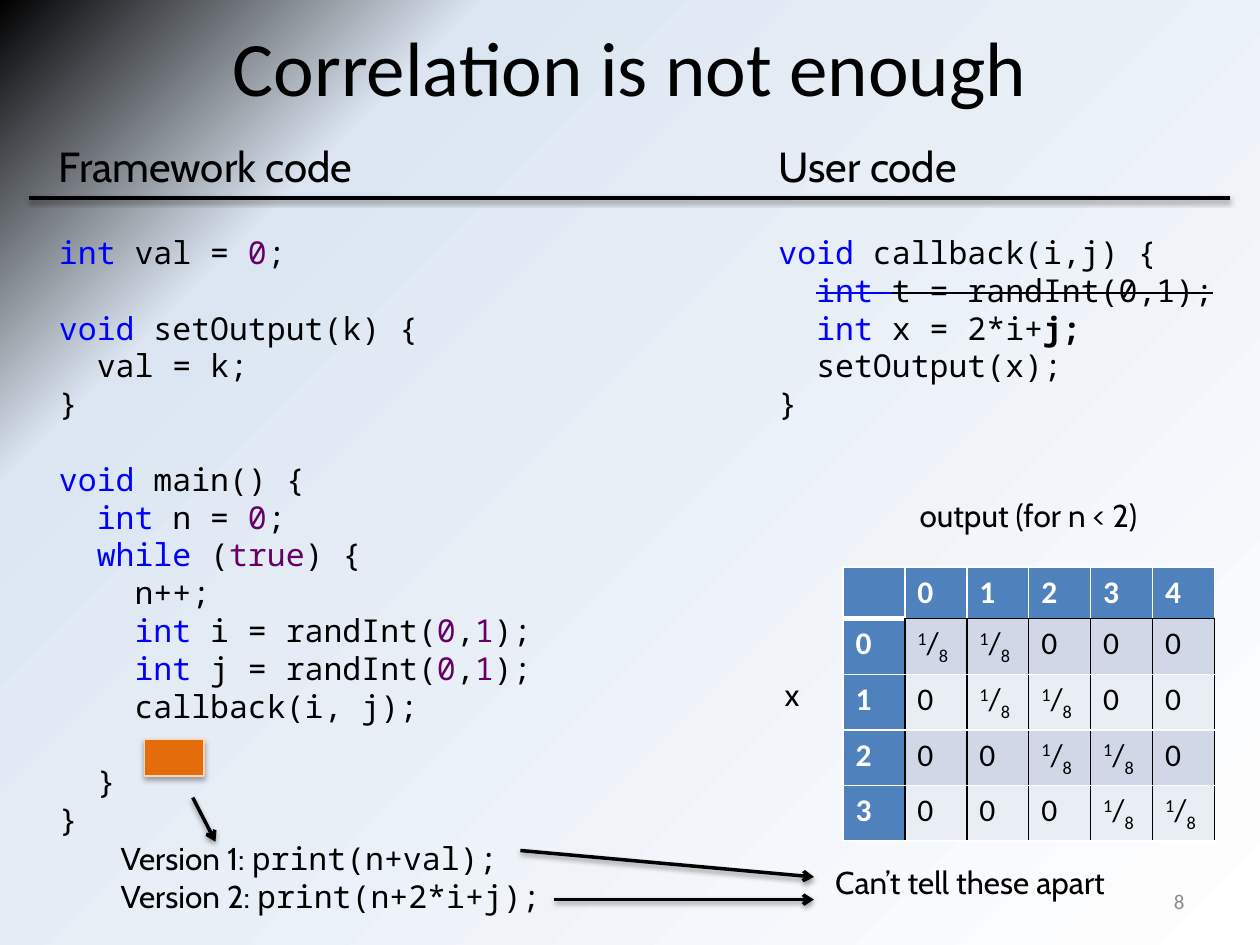
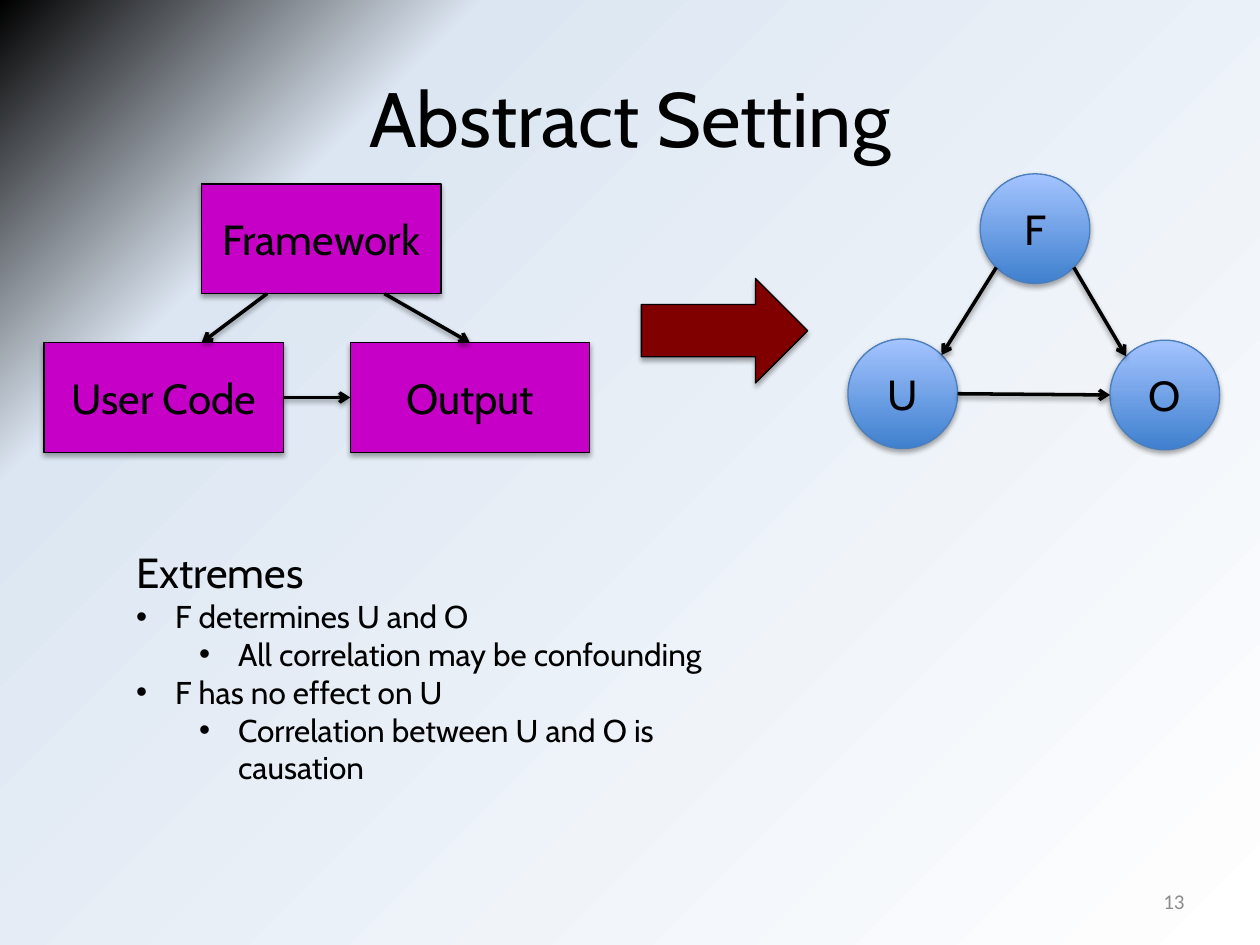
from lxml import etree
from pptx import Presentation
from pptx.dml.color import RGBColor
from pptx.enum.shapes import MSO_CONNECTOR, MSO_SHAPE
from pptx.enum.text import MSO_ANCHOR, MSO_AUTO_SIZE, PP_ALIGN
from pptx.oxml import parse_xml
from pptx.oxml.ns import qn
from pptx.util import Inches, Pt

RECT, OVAL, ARROW = MSO_SHAPE.RECTANGLE, MSO_SHAPE.OVAL, MSO_SHAPE.RIGHT_ARROW
STRAIGHT = MSO_CONNECTOR.STRAIGHT
LEFT, CENTER, RIGHT = PP_ALIGN.LEFT, PP_ALIGN.CENTER, PP_ALIGN.RIGHT
TOP, MIDDLE = MSO_ANCHOR.TOP, MSO_ANCHOR.MIDDLE
FIT_SHAPE, NO_FIT = MSO_AUTO_SIZE.SHAPE_TO_FIT_TEXT, MSO_AUTO_SIZE.NONE
TITLE_AND_CONTENT, TITLE_ONLY = 1, 5

C = {
    "black": "000000", "white": "FFFFFF", "sky": "DCE6F2", "number": "8C8C8C",
    "keyword": "0000FF", "literal": "660066", "hole": "E46C0A", "hole_line": "FCD5B5",
    "head": "4F81BD", "odd": "D0D8E8", "even": "E9EDF4", "box": "C700C7",
    "node_low": "3F80CE", "node_high": "A4C4FF", "node_line": "4B7EBC", "implies": "800000",
}
SANS, BODY, MONO = "Cabin", "Calibri", "Noto Sans Mono"
KEYWORDS = ("int", "void", "while")
CODE_LINE = Pt(21.6)
CODE_INDENT = 0.15
A_NS = "http://schemas.openxmlformats.org/drawingml/2006/main"

FRAMEWORK_CODE = """\
`int `val = `0`;

`void `setOutput(k) {
  val = k;
}

`void `main() {
  `int `n = `0`;
  `while` (`true`) {
    n++;
    `int `i = randInt(`0`,`1`);
    `int `j = randInt(`0`,`1`);
    callback(i, j);

  }
}"""
USER_CODE = """\
`void `callback(i,j) {
  `int `t = randInt(0,1);
  `int `x = 2*i+j;
  setOutput(x);
}"""


def rgb(name):
    return RGBColor.from_string(C[name])


# Text
def add_run(p, text, size=18, font=SANS, color="black", bold=False, strike=False, base=0):
    r = p.add_run()
    r.text = text
    f = r.font
    f.size, f.name, f.bold = Pt(size), font, bold
    f.color.rgb = rgb(color)
    rPr = r._r.get_or_add_rPr()
    if strike:
        rPr.set("strike", "sngStrike")
    if base:
        rPr.set("baseline", str(base * 1000))


def write(tf, paragraphs, align=LEFT, **fmt):
    """Each paragraph is a string or a list of (text, format) runs."""
    for i, runs in enumerate(paragraphs):
        p = tf.paragraphs[0] if i == 0 else tf.add_paragraph()
        p.alignment = align
        for text, own in [(runs, {})] if isinstance(runs, str) else runs:
            add_run(p, text, **{**fmt, **own})


def label(s, box, paragraphs, **fmt):
    tf = s.shapes.add_textbox(*map(Inches, box)).text_frame
    tf.word_wrap = False
    tf.auto_size = FIT_SHAPE
    write(tf, paragraphs, **fmt)
    return tf


def set_indent(p, left, hanging=0, bullet=None):
    pPr = p._p.get_or_add_pPr()
    pPr.set("marL", str(Inches(left)))
    pPr.set("indent", str(Inches(-hanging)))
    if bullet:
        etree.SubElement(pPr, qn("a:buChar")).set("char", bullet)
    else:
        etree.SubElement(pPr, qn("a:buNone"))


def code_runs(line):
    """Backticks enclose the coloured words of a line of code."""
    runs = []
    for i, part in enumerate(line.split("`")):
        if part:
            color = "black"
            if i % 2:
                color = "keyword" if part.strip() in KEYWORDS else "literal"
            runs.append((part, {"color": color}))
    return runs


def code_block(s, box, source, strike_line=None, bold_end=None):
    lines = source.split("\n")
    shown = [i for i, line in enumerate(lines) if line]
    paragraphs = [code_runs(lines[i].lstrip()) for i in shown]
    if strike_line is not None:
        paragraphs[strike_line] = [(t, {**f, "strike": True}) for t, f in paragraphs[strike_line]]
    if bold_end:
        row, end = bold_end
        text, f = paragraphs[row].pop()
        paragraphs[row] += [(text.removesuffix(end), f), (end, {"bold": True})]
    tf = label(s, box, paragraphs, font=MONO)
    for p, i in zip(tf.paragraphs, shown):
        set_indent(p, CODE_INDENT * (len(lines[i]) - len(lines[i].lstrip())))
        if i and not lines[i - 1]:
            p.space_before = CODE_LINE


# Shapes and lines
def add_shadow(spPr, distance, alpha):
    effects = spPr.find(qn("a:effectLst"))
    if effects is None:
        effects = etree.SubElement(spPr, qn("a:effectLst"))
    effects.append(parse_xml(
        f'<a:outerShdw xmlns:a="{A_NS}" blurRad="{Pt(3.1)}" dist="{Pt(distance)}" dir="5400000" '
        f'rotWithShape="0"><a:srgbClr val="{C["black"]}"><a:alpha val="{alpha * 1000}"/>'
        '</a:srgbClr></a:outerShdw>'))


def add_block(s, kind, box, fill, line="black", text=None):
    """A fill given as a pair runs from the bottom colour to the top one."""
    sp = s.shapes.add_shape(kind, *map(Inches, box))
    if isinstance(fill, tuple):
        sp.fill.gradient()
        sp.fill.gradient_angle = 90
        for stop, name in zip(sp.fill.gradient_stops, fill):
            stop.color.rgb = rgb(name)
    else:
        sp.fill.solid()
        sp.fill.fore_color.rgb = rgb(fill)
    sp.line.color.rgb = rgb(line)
    sp.line.width = Pt(0.75)
    sp.shadow.inherit = False
    add_shadow(sp._element.spPr, 1.8, 35)
    if text:
        sp.text_frame.vertical_anchor = MIDDLE
        write(sp.text_frame, [text], align=CENTER, size=24)
    return sp


def add_line(s, start, end, arrow=True):
    line = s.shapes.add_connector(STRAIGHT, *map(Inches, start + end))
    line.line.color.rgb = rgb("black")
    line.line.width = Pt(2)
    if arrow:
        etree.SubElement(line.line._get_or_add_ln(), qn("a:tailEnd")).set("type", "arrow")
    add_shadow(line._element.spPr, 1.6, 38)
    return line


# Shared slide parts
def set_background(prs):
    cSld = prs.slide_master._element.cSld
    old = cSld.find(qn("p:bg"))
    if old is not None:
        cSld.remove(old)
    stops = "".join(f'<a:gs pos="{pos * 1000}"><a:srgbClr val="{C[name]}"/></a:gs>'
                    for pos, name in [(0, "white"), (78, "sky"), (100, "black")])
    cSld.insert(0, parse_xml(
        '<p:bg xmlns:p="http://schemas.openxmlformats.org/presentationml/2006/main" '
        f'xmlns:a="{A_NS}"><p:bgPr><a:gradFill rotWithShape="1"><a:gsLst>{stops}</a:gsLst>'
        '<a:path path="circle"><a:fillToRect l="100000" t="100000"/></a:path></a:gradFill>'
        '<a:effectLst/></p:bgPr></p:bg>'))


def place(sp, box):
    sp.left, sp.top, sp.width, sp.height = map(Inches, box)


def new_slide(prs, layout, title, title_top, number, font=SANS):
    s = prs.slides.add_slide(prs.slide_layouts[layout])
    place(s.shapes.title, (0.5, title_top, 9, 1.25))
    tf = s.shapes.title.text_frame
    tf.vertical_anchor = MIDDLE
    write(tf, [title], align=CENTER, size=44, font=font)
    tf = s.shapes.add_textbox(*map(Inches, (7.17, 6.95, 2.33, 0.4))).text_frame
    tf.word_wrap = True
    tf.vertical_anchor = MIDDLE
    write(tf, [str(number)], align=RIGHT, size=12, font=BODY, color="number")
    return s


# Probability table
def set_borders(cell, **sides):
    tcPr = cell._tc.get_or_add_tcPr()
    for i, side in enumerate("LRTB"):
        color, width = sides[side]
        tcPr.insert(i, parse_xml(
            f'<a:ln{side} xmlns:a="{A_NS}" w="{Pt(width)}"><a:solidFill>'
            f'<a:srgbClr val="{C[color]}"/></a:solidFill></a:ln{side}>'))


def probability_table(s, x, y):
    rows, cols = 5, 6
    table = s.shapes.add_table(rows, cols, *map(Inches, (x, y, 2.95, 2.05))).table
    for col in table.columns:
        col.width = Inches(2.95 / cols)
    eighth = [("1", {"base": 30}), ("/", {}), ("8", {"base": -25})]
    white, black = ("white", 1), ("black", 1)
    for i in range(rows):
        table.rows[i].height = Inches(0.41)
        for j in range(cols):
            cell = table.cell(i, j)
            header = i == 0 or j == 0
            cell.fill.solid()
            cell.fill.fore_color.rgb = rgb("head" if header else "odd" if i % 2 else "even")
            edge = white if header else black
            bottom = white if i else black if j else ("white", 3)
            set_borders(cell, L=edge, R=black if i else white,
                        T=black if i == 1 and j else white, B=bottom)
            if header:
                if i or j:
                    write(cell.text_frame, [str(i + j - 1)], font=BODY, color="white", bold=True)
            else:
                write(cell.text_frame, [eighth if j - i in (0, 1) else "0"], font=BODY)


# Slides
def correlation_slide(prs):
    s = new_slide(prs, TITLE_ONLY, "Correlation is not enough", -0.1, 8, font=BODY)
    left, right = 0.37, 6.08

    # Column heads and code
    label(s, (left, 1.07, 2.53, 0.5), ["Framework code"], size=24)
    label(s, (right, 1.07, 1.62, 0.5), ["User code"], size=24)
    add_line(s, (0.23, 1.57), (9.76, 1.57), arrow=False)
    code_block(s, (left, 1.8, 3.97, 4.95), FRAMEWORK_CODE)
    code_block(s, (right, 1.8, 3.69, 1.62), USER_CODE, strike_line=1, bold_end=(2, "j;"))

    # Missing statement and its two versions
    add_block(s, RECT, (1.15, 5.87, 0.47, 0.29), "hole", "hole_line")
    add_line(s, (1.53, 6.33), (1.71, 6.68))
    versions = ["print(n+val);", "print(n+2*i+j);"]
    label(s, (0.86, 6.61, 3.54, 0.71),
          [[(f"Version {n}: ", {}), (code, {"font": MONO})] for n, code in enumerate(versions, 1)])
    add_line(s, (4.4, 7.14), (6.46, 7.14))
    add_line(s, (4.13, 6.75), (6.46, 6.96))
    label(s, (6.53, 6.8, 2.35, 0.4), ["Can’t tell these apart"])

    # Joint distribution
    probability_table(s, 6.69, 4.5)
    label(s, (7.2, 3.89, 2.03, 0.4), ["output (for n < 2)"])
    label(s, (6.13, 5.31, 0.33, 0.4), ["x"])


def component_diagram(s, x, y):
    w, h, drop = 1.9, 0.87, 1.26
    add_block(s, RECT, (x + 1.25, y, w, h), "box", text="Framework")
    user = add_block(s, RECT, (x, y + drop, w, h), "box", text="User Code")
    output = add_block(s, RECT, (x + 2.43, y + drop, w, h), "box", text="Output")
    add_line(s, (x + 1.77, y + h), (x + 1.25, y + drop))
    add_line(s, (x + 2.7, y + h), (x + 3.38, y + drop)).end_connect(output, 0)
    link = add_line(s, (x + w, y + drop + h / 2), (x + 2.43, y + drop + h / 2))
    link.begin_connect(user, 3)
    link.end_connect(output, 1)


def causal_graph(s, x, y):
    size = 0.87
    spots = {"F": (x + 1.05, y), "U": (x, y + 1.31), "O": (x + 2.08, y + 1.32)}
    for name, spot in spots.items():
        add_block(s, OVAL, spot + (size, size), ("node_low", "node_high"), "node_line", name)

    def rim(name, dx, dy):
        """Point on a node's rim in the direction dx, dy."""
        reach = size / 2 / (dx * dx + dy * dy) ** 0.5
        cx, cy = (v + size / 2 for v in spots[name])
        return cx + dx * reach, cy + dy * reach

    add_line(s, rim("F", 1, 1), rim("O", -1, -1))
    add_line(s, rim("F", -1, 1), rim("U", 1, -1))
    add_line(s, rim("U", 1, 0), rim("O", -1, 0))


def extremes_list(s, box):
    items = [(0, "F determines U and O"), (1, "All correlation may be confounding"),
             (0, "F has no effect on U"), (1, "Correlation between U and O is causation")]
    body = s.placeholders[1]
    place(body, box)
    tf = body.text_frame
    tf.word_wrap = True
    tf.auto_size = NO_FIT
    tf.vertical_anchor = TOP
    write(tf, [[("Extremes", {"size": 24})]] + [text for _, text in items])
    for p in tf.paragraphs:
        p.space_before = Pt(0)
    set_indent(tf.paragraphs[0], 0)
    for p, (level, _) in zip(tf.paragraphs[1:], items):
        p.level = level
        set_indent(p, 0.31 + 0.5 * level, 0.31, "•")


def abstract_slide(prs):
    s = new_slide(prs, TITLE_AND_CONTENT, "Abstract Setting", 0.3, 13)
    component_diagram(s, 0.35, 1.46)
    add_block(s, ARROW, (5.09, 2.21, 1.32, 0.83), "implies")
    causal_graph(s, 6.73, 1.38)
    extremes_list(s, (0.98, 4.29, 5.36, 1.95))


def main():
    prs = Presentation()
    prs.slide_width, prs.slide_height = Inches(10), Inches(7.5)
    set_background(prs)
    correlation_slide(prs)
    abstract_slide(prs)
    prs.save("out.pptx")


if __name__ == "__main__":
    main()
